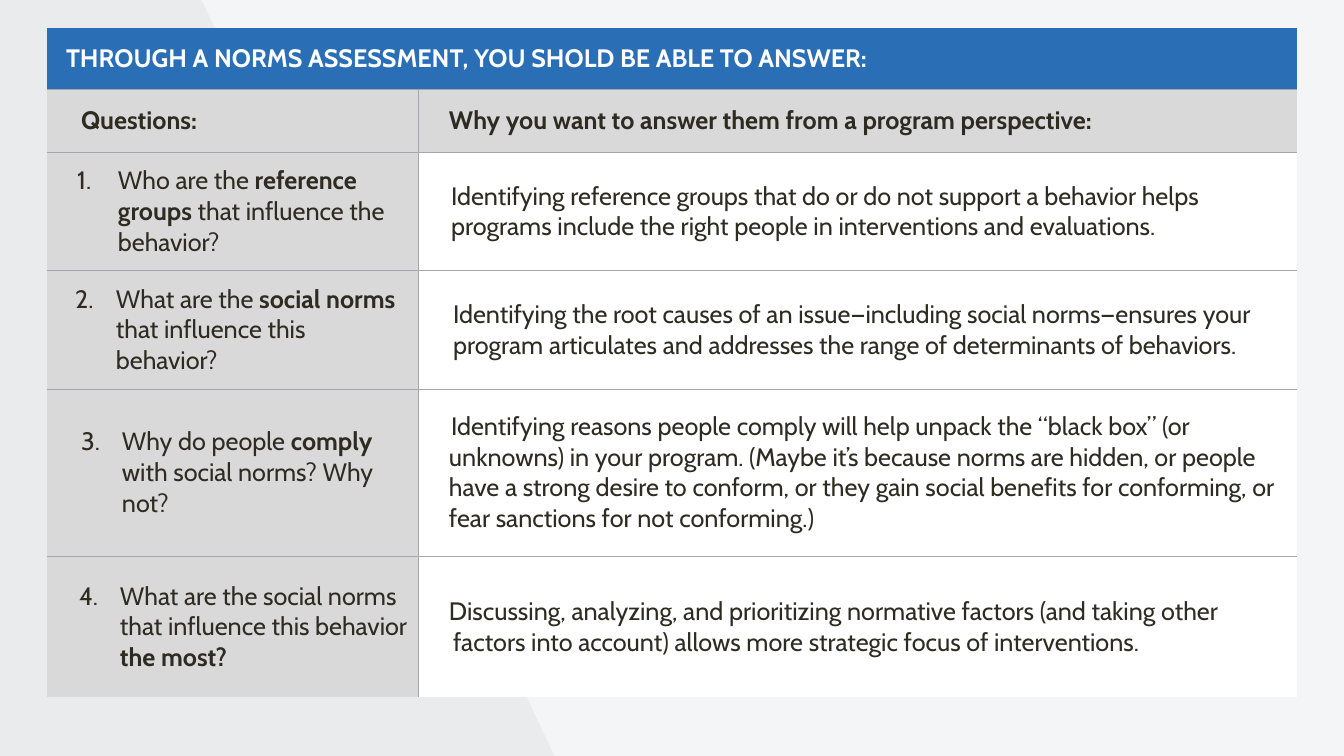
from lxml import etree
from pptx import Presentation, util as u
from pptx.dml import color
from pptx.enum import text
from pptx.oxml import ns

WIDTH, HEIGHT = 26.67, 15
FONT, SIZE = "Cabin", 36
COLORS = {
    "background": "F4F5F7", "wedge": "393941", "banner": "2A6FB6",
    "label": "D9D9D9", "answer": "FFFFFF", "border": "A6A7AC",
    "light text": "FFFEFF", "dark text": "2E2C22",
}

# Content: runs are (text, bold); each cell has (left margin, first-line indent)
HEADING = "THROUGH A NORMS ASSESSMENT, YOU SHOLD BE ABLE TO ANSWER:"
COLUMN_TITLES = [("Questions:", 0.53),
                 ("Why you want to answer them from a program perspective:", 0.45)]
QUESTIONS = [
    ([("Who are the ", False), ("reference groups", True),
      (" that influence the behavior?", False)], 1.26,
     "Identifying reference groups that do or do not support a behavior helps "
     "programs include the right people in interventions and evaluations.", (0.49, 0)),
    ([("What are the ", False), ("social norms", True),
      (" that influence this behavior?", False)], 1.22,
     "Identifying the root causes of an issue—including social norms—ensures your "
     "program articulates and addresses the range of determinants of behaviors.", (0.53, 0)),
    ([("Why do people ", False), ("comply", True),
      (" with social norms? Why not?", False)], 1.34,
     "Identifying reasons people comply will help unpack the “black box” (or unknowns) "
     "in your program. (Maybe it’s because norms are hidden, or people have a strong "
     "desire to conform, or they gain social benefits for conforming, or fear sanctions "
     "for not conforming.)", (0.45, 0.04)),
    ([("What are the social norms that influence this behavior", False),
      (" the most?", True)], 1.3,
     "Discussing, analyzing, and prioritizing normative factors (and taking other "
     "factors into account) allows more strategic focus of interventions.", (0.53, -0.08)),
]
COLUMN_WIDTHS = [7.38, 17.42]
ROW_HEIGHTS = [1.22, 1.24, 2.35, 2.35, 3.31, 2.81]
NUMBER_HANG = -0.81


def rgb(name):
    return color.RGBColor.from_string(COLORS[name])


def set_borders(cell, visible_sides):
    properties = cell._tc.get_or_add_tcPr()
    for side in "LRTB":
        line = etree.SubElement(properties, ns.qn(f"a:ln{side}"), w=str(u.Pt(1)))
        if side in visible_sides:
            fill = etree.SubElement(line, ns.qn("a:solidFill"))
            etree.SubElement(fill, ns.qn("a:srgbClr"), val=COLORS["border"])
        else:
            etree.SubElement(line, ns.qn("a:noFill"))


def fill_cell(cell, runs, indents, fill, borders, ink="dark text", number=None):
    set_borders(cell, borders)
    cell.fill.solid()
    cell.fill.fore_color.rgb = rgb(fill)
    cell.vertical_anchor = text.MSO_ANCHOR.MIDDLE
    cell.margin_left = cell.margin_right = u.Inches(0.15)
    cell.margin_top = cell.margin_bottom = 0
    paragraph = cell.text_frame.paragraphs[0]
    paragraph.alignment = text.PP_ALIGN.LEFT
    properties = paragraph._p.get_or_add_pPr()
    for key, value in zip(("marL", "indent"), indents):
        properties.set(key, str(u.Inches(value)))
    if number:
        etree.SubElement(properties, ns.qn("a:buAutoNum"),
                         type="arabicPeriod", startAt=str(number))
    for words, bold in runs:
        run = paragraph.add_run()
        run.text = words
        run.font.name, run.font.size, run.font.bold = FONT, u.Pt(SIZE), bold
        run.font.color.rgb = rgb(ink)


presentation = Presentation()
presentation.slide_width, presentation.slide_height = u.Inches(WIDTH), u.Inches(HEIGHT)
slide = presentation.slides.add_slide(presentation.slide_layouts[6])
slide.background.fill.solid()
slide.background.fill.fore_color.rgb = rgb("background")

# Pale slanted wedge behind the table
builder = slide.shapes.build_freeform(0, 0, scale=u.Inches(1))
builder.add_line_segments([(3.53, 0), (10.89, HEIGHT), (0, HEIGHT)], close=True)
wedge = builder.convert_to_shape()
wedge.shadow.inherit = False
wedge.line.fill.background()
wedge.fill.solid()
wedge.fill.fore_color.rgb = rgb("wedge")
wedge_color = wedge._element.spPr.find(".//" + ns.qn("a:srgbClr"))
etree.SubElement(wedge_color, ns.qn("a:alpha"), val="5000")

# Table grid
table = slide.shapes.add_table(
    len(ROW_HEIGHTS), len(COLUMN_WIDTHS), u.Inches(0.93), u.Inches(0.56),
    u.Inches(sum(COLUMN_WIDTHS)), u.Inches(sum(ROW_HEIGHTS))).table
table.first_row = table.horz_banding = False
for column, width in zip(table.columns, COLUMN_WIDTHS):
    column.width = u.Inches(width)
for row, height in zip(table.rows, ROW_HEIGHTS):
    row.height = u.Inches(height)

# Banner and column titles
table.cell(0, 0).merge(table.cell(0, 1))
fill_cell(table.cell(0, 0), [(HEADING, True)], (0.23, 0), "banner", "B", "light text")
for column, (title, indent) in enumerate(COLUMN_TITLES):
    fill_cell(table.cell(1, column), [(title, True)], (0, indent), "label", "RL"[column] + "TB")

# Numbered questions and their reasons
for number, (question, margin, reason, indents) in enumerate(QUESTIONS, 1):
    row = number + 1
    edges = "T" if number == len(QUESTIONS) else "TB"
    fill_cell(table.cell(row, 0), question, (margin, NUMBER_HANG), "label",
              "R" + edges, number=number)
    fill_cell(table.cell(row, 1), [(reason, False)], indents, "answer", "L" + edges)

presentation.save("out.pptx")
